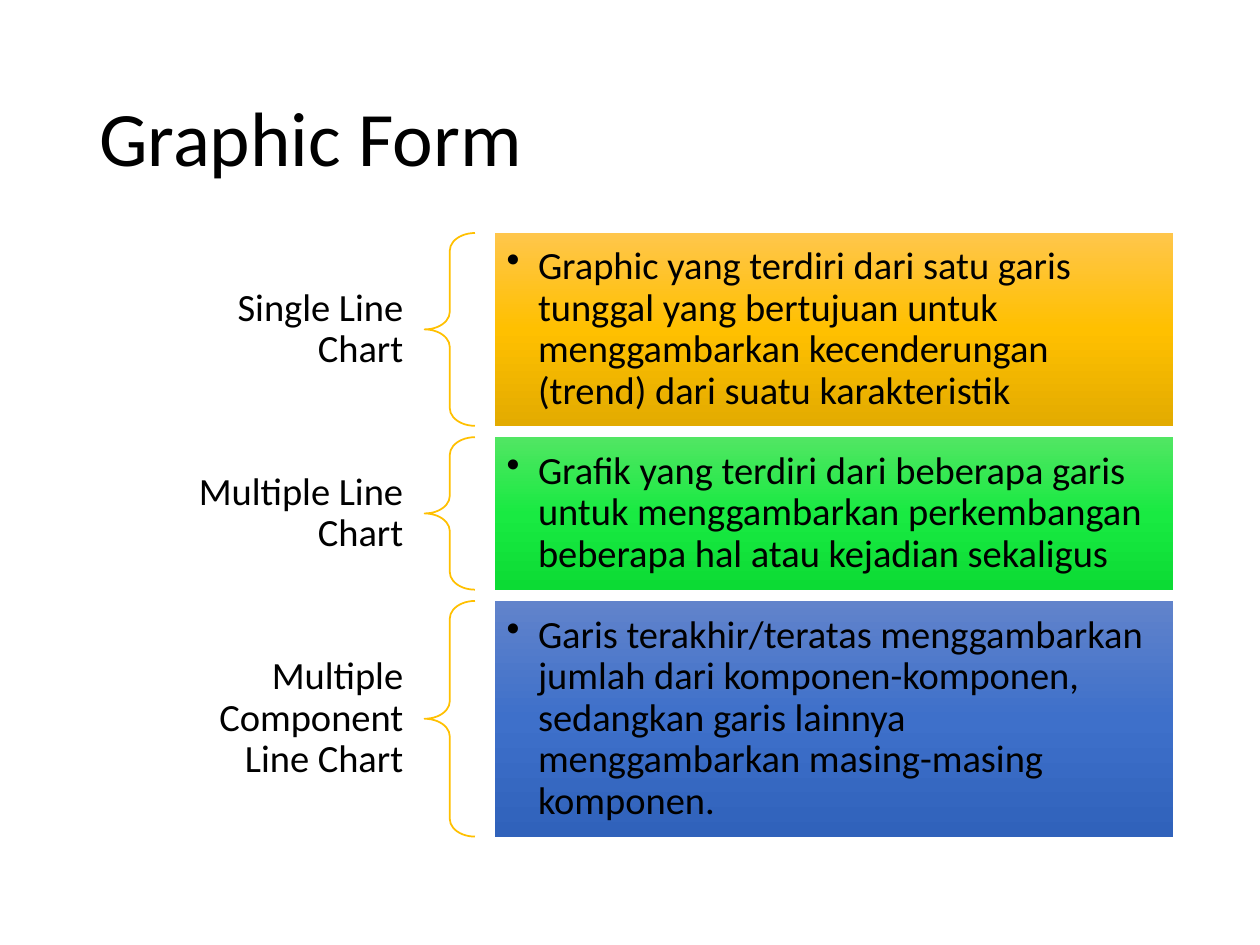
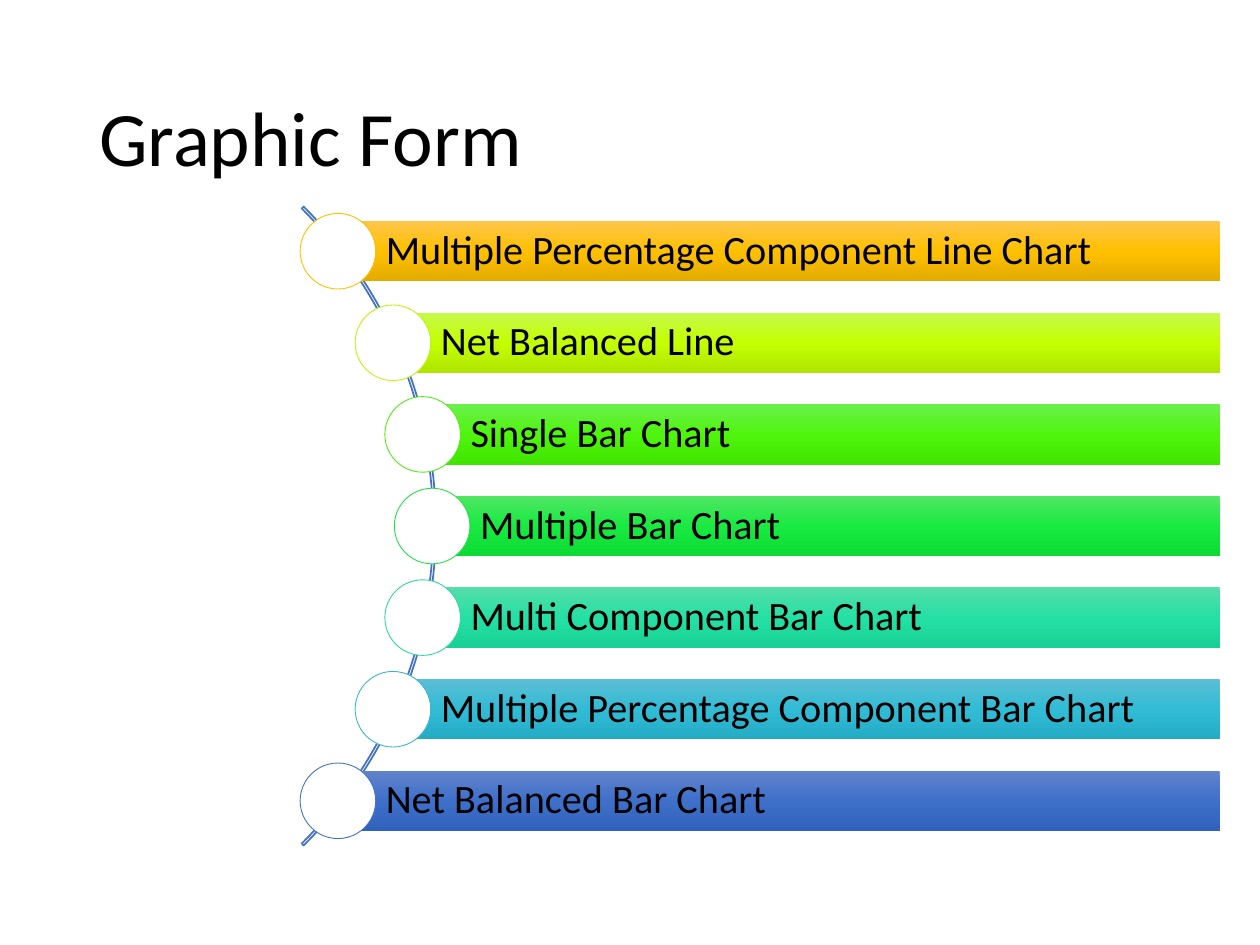
from copy import deepcopy
from dataclasses import dataclass
from itertools import accumulate
from math import sqrt

from lxml import etree
from pptx import Presentation, util as u
from pptx.dml.color import RGBColor
from pptx.enum import shapes, text
from pptx.oxml import ns

COLUMNS, ROWS = 100, 75
CELL = u.Inches(0.1)
FONT = "Calibri"
BLACK, WHITE, ARC_BLUE, GOLD = "000000", "FFFFFF", "4472C4", "FFC000"

Gradient = tuple[str, str, str]
GOLD_FILL: Gradient = ("FFC64B", GOLD, "E3AB00")
LIME_FILL: Gradient = ("C6F94C", "C4FF01", "AFE400")
LEAF_FILL: Gradient = ("6BEF4D", "4FF50D", "41E500")
GREEN_FILL: Gradient = ("51E663", "19EA42", "0CDB34")
MINT_FILL: Gradient = ("55DDAB", "25E0A4", "18D095")
CYAN_FILL: Gradient = ("5BBED4", "32BBD5", "24ACC5")
BLUE_FILL: Gradient = ("6183CB", "3E70CA", "3062BB")


@dataclass(frozen=True)
class Area:
    column: float
    row: float
    columns: float
    rows: float

    def lengths(self) -> list[int]:
        return [round(CELL * n) for n in (self.column, self.row, self.columns, self.rows)]


@dataclass(frozen=True)
class TextStyle:
    size: float
    insets: tuple[float, float, float, float]
    align: text.PP_ALIGN = text.PP_ALIGN.LEFT
    bullet: bool = False


@dataclass(frozen=True)
class Definition:
    label: str
    label_rows: float
    description: str
    rows: float
    gradient: Gradient


@dataclass(frozen=True)
class ChartType:
    name: str
    gradient: Gradient
    ring: str


TITLE = TextStyle(44, (1, 0.5, 1, 0.5))
LABEL = TextStyle(22, (1.7, 0.6, 1.7, 0.6), text.PP_ALIGN.RIGHT)
DESCRIPTION = TextStyle(22, (0.9, 0.9, 0.9, 0.9), bullet=True)
BAR_NAME = TextStyle(23, (3.8, 0.6, 0.6, 0.6))

DEFINITIONS = [
    Definition("Single Line Chart", 8,
               "Graphic yang terdiri dari satu garis tunggal yang bertujuan untuk "
               "menggambarkan kecenderungan (trend) dari suatu karakteristik",
               15.3, GOLD_FILL),
    Definition("Multiple Line Chart", 8,
               "Grafik yang terdiri dari beberapa garis untuk menggambarkan "
               "perkembangan beberapa hal atau kejadian sekaligus",
               12.1, GREEN_FILL),
    Definition("Multiple Component Line Chart", 11.3,
               "Garis terakhir/teratas menggambarkan jumlah dari komponen-komponen, "
               "sedangkan garis lainnya menggambarkan masing-masing komponen.",
               18.7, BLUE_FILL),
]

CHART_TYPES = [
    ChartType("Multiple Percentage Component Line Chart", GOLD_FILL, GOLD),
    ChartType("Net Balanced Line", LIME_FILL, "BEF50C"),
    ChartType("Single Bar Chart", LEAF_FILL, "53EB17"),
    ChartType("Multiple Bar Chart", GREEN_FILL, "23E148"),
    ChartType("Multi Component Bar Chart", MINT_FILL, "2ED7A1"),
    ChartType("Multiple Percentage Component Bar Chart", CYAN_FILL, "39B6CE"),
    ChartType("Net Balanced Bar Chart", BLUE_FILL, ARC_BLUE),
]


def color(value: str) -> RGBColor:
    return RGBColor.from_string(value)


def write(shape, words: str, style: TextStyle) -> None:
    frame = shape.text_frame
    frame.word_wrap = True
    frame.vertical_anchor = text.MSO_ANCHOR.MIDDLE
    (frame.margin_left, frame.margin_top,
     frame.margin_right, frame.margin_bottom) = [round(CELL * n) for n in style.insets]
    paragraph = frame.paragraphs[0]
    paragraph.alignment = style.align
    paragraph.line_spacing = 0.9
    if style.bullet:
        properties = paragraph._p.get_or_add_pPr()
        properties.set("marL", str(u.Inches(0.25)))
        properties.set("indent", str(-u.Inches(0.25)))
        etree.SubElement(properties, ns.qn("a:buChar"), char="•")
    run = paragraph.add_run()
    run.text = words
    run.font.name = FONT
    run.font.size = u.Pt(style.size)
    run.font.color.rgb = color(BLACK)


def add_text(slide, area: Area, words: str, style: TextStyle) -> None:
    write(slide.shapes.add_textbox(*area.lengths()), words, style)


def add_outline(slide, kind: shapes.MSO_SHAPE, area: Area, line: str,
                width: float, adjustments: tuple = (), fill: str | None = None) -> None:
    shape = slide.shapes.add_shape(kind, *area.lengths())
    shape.shadow.inherit = False
    for index, value in enumerate(adjustments):
        shape.adjustments[index] = value
    if fill:
        shape.fill.solid()
        shape.fill.fore_color.rgb = color(fill)
    else:
        shape.fill.background()
    shape.line.color.rgb = color(line)
    shape.line.width = u.Pt(width)


def add_band(slide, area: Area, gradient: Gradient, words: str, style: TextStyle) -> None:
    shape = slide.shapes.add_shape(shapes.MSO_SHAPE.RECTANGLE, *area.lengths())
    shape.shadow.inherit = False
    shape.line.fill.background()
    shape.fill.gradient()
    shape.fill.gradient_angle = 270
    stops = shape._element.spPr.find(".//" + ns.qn("a:gsLst"))
    stops.append(deepcopy(stops[-1]))
    for stop, value, position in zip(shape.fill.gradient_stops, gradient, (0, 0.5, 1)):
        stop.color.rgb = color(value)
        stop.position = position
    write(shape, words, style)


def add_titled_slide(presentation):
    slide = presentation.slides.add_slide(presentation.slide_layouts[6])
    add_text(slide, Area(6.9, 4, 86.2, 14.5), "Graphic Form", TITLE)
    return slide


def add_definitions(slide) -> None:
    gap = 0.9
    tops = accumulate((item.rows + gap for item in DEFINITIONS), initial=18.5)
    for item, top in zip(DEFINITIONS, tops):
        label_top = top + (item.rows - item.label_rows) / 2
        add_text(slide, Area(13.9, label_top, 19.8, item.label_rows), item.label, LABEL)
        add_outline(slide, shapes.MSO_SHAPE.LEFT_BRACE, Area(33.7, top, 4, item.rows),
                    GOLD, 1, (0.35, 0.5))
        add_band(slide, Area(39.3, top, 53.8, item.rows), item.gradient,
                 item.description, DESCRIPTION)


def add_chart_types(slide) -> None:
    center_x, center_y, arc_size = -1.25, 41.75, 71.7
    orbit, pitch, right = 35.55, 7.27, 96.8
    bar_rows, circle_size = 4.8, 6
    add_outline(slide, shapes.MSO_SHAPE.BLOCK_ARC,
                Area(center_x - arc_size / 2, center_y - arc_size / 2, arc_size, arc_size),
                ARC_BLUE, 1, (189, 27, 0.003))
    for index, item in enumerate(CHART_TYPES):
        offset = (index - (len(CHART_TYPES) - 1) / 2) * pitch
        x, y = center_x + sqrt(orbit ** 2 - offset ** 2), center_y + offset
        add_band(slide, Area(x, y - bar_rows / 2, right - x, bar_rows),
                 item.gradient, item.name, BAR_NAME)
        add_outline(slide, shapes.MSO_SHAPE.OVAL,
                    Area(x - circle_size / 2, y - circle_size / 2, circle_size, circle_size),
                    item.ring, 0.5, fill=WHITE)


def main() -> None:
    presentation = Presentation()
    presentation.slide_width = CELL * COLUMNS
    presentation.slide_height = CELL * ROWS
    add_definitions(add_titled_slide(presentation))
    add_chart_types(add_titled_slide(presentation))
    presentation.save("out.pptx")


if __name__ == "__main__":
    main()
